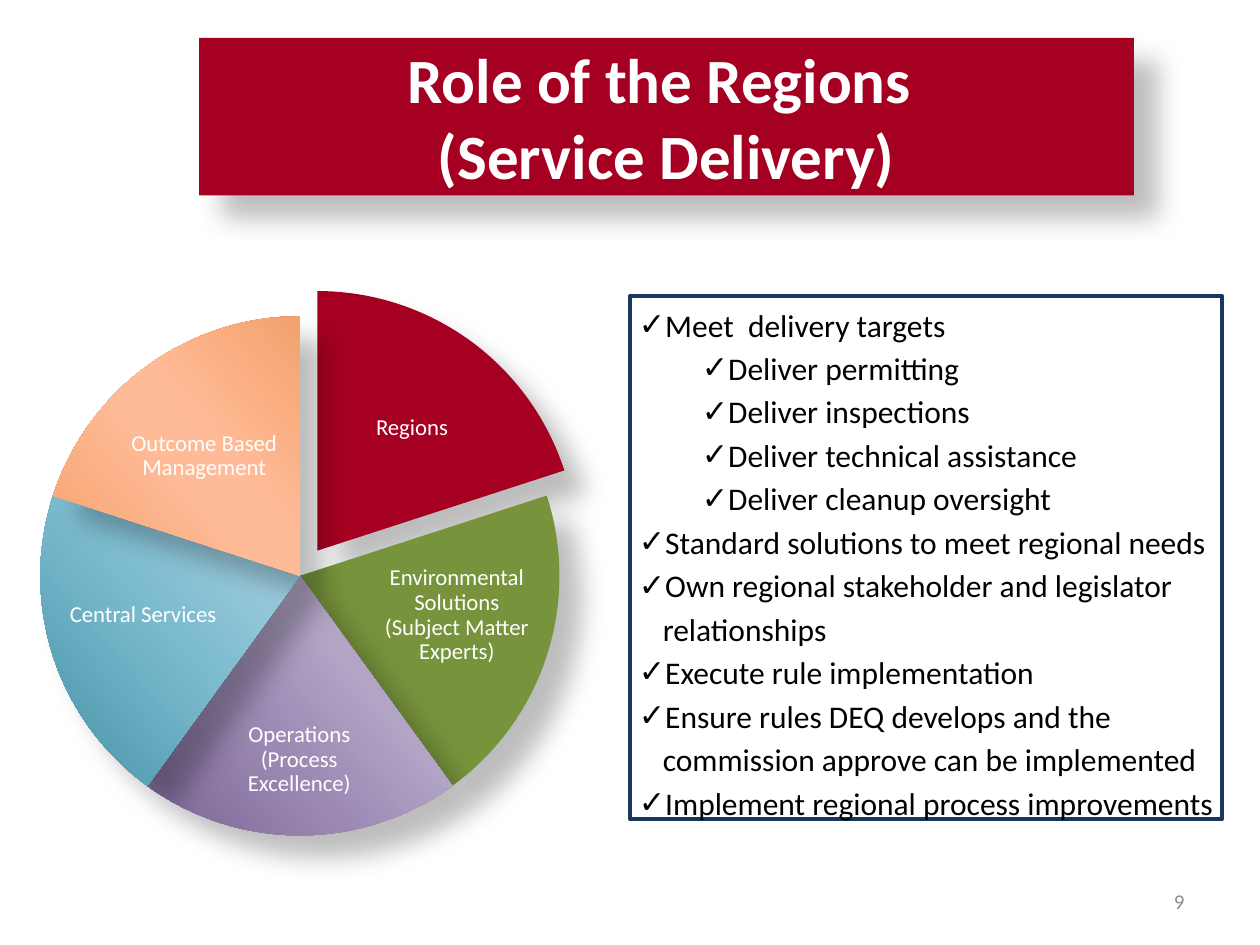
from lxml.etree import SubElement
from pptx import Presentation
from pptx.dml.color import RGBColor
from pptx.enum.shapes import MSO_SHAPE as SHAPE
from pptx.enum.text import MSO_ANCHOR as ANCHOR, MSO_AUTO_SIZE as AUTO, PP_ALIGN as ALIGN
from pptx.oxml.ns import qn
from pptx.util import Inches, Pt

COLORS = {"red": "A50021", "green": "77933C", "navy": "17375E", "gray": "8C8C8C",
          "white": "FFFFFF", "black": "000000"}
# Gradients from edge to middle and back to the edge
GRADIENTS = {
    "purple": ["675082", "9A88B2", "B1A4C5", "B1A4C5", "9B89B3", "675082"],
    "teal": ["3C8A9F", "7BBACF", "9ACADC", "9ACADC", "7CBBCF", "3C8A9F"],
    "orange": ["C67838", "F8A979", "FFBB97", "FFBB97", "F8AA7A", "C67838"],
}
STOPS = [0, 33, 47, 53, 68, 100]


def write(p, text, size=18, color="black", bold=False, align=None, spacing=None):
    p.text = text
    p.alignment = align
    p.line_spacing = spacing
    p.space_before = Pt(0)
    for r in p.runs:
        r.font.name = "Calibri"
        r.font.size = Pt(size)
        r.font.bold = bold
        r.font.color.rgb = RGBColor.from_string(COLORS[color])


def add_shadow(sp):
    sp.shadow.inherit = False
    effects = sp._element.spPr.find(qn("a:effectLst"))
    outer = SubElement(effects, qn("a:outerShdw"), blurRad=str(Pt(15)), dist=str(Pt(18)),
                       dir=str(45 * 60000), algn="tl", rotWithShape="0")
    clr = SubElement(outer, qn("a:srgbClr"), val=COLORS["black"])
    SubElement(clr, qn("a:alpha"), val="26000")


prs = Presentation()
prs.slide_width, prs.slide_height = Inches(10), Inches(7.5)
s = prs.slides.add_slide(prs.slide_layouts[1])

# Title band
title = s.shapes.title
title.left, title.top, title.width, title.height = [Inches(v) for v in (1.58, 0.3, 7.42, 1.25)]
title.fill.solid()
title.fill.fore_color.rgb = RGBColor.from_string(COLORS["red"])
add_shadow(title)
tf = title.text_frame
tf.auto_size = AUTO.NONE
tf.vertical_anchor = ANCHOR.MIDDLE
write(tf.paragraphs[0], "Role of the Regions \v(Service Delivery)", size=36, color="white",
      bold=True, align=ALIGN.CENTER)

# Slide number
number = s.shapes.add_textbox(Inches(7.17), Inches(6.95), Inches(2.33), Inches(0.4))
tf = number.text_frame
tf.word_wrap = True
tf.vertical_anchor = ANCHOR.MIDDLE
write(tf.paragraphs[0], "9", size=12, color="gray", align=ALIGN.RIGHT)

# Framed checklist
ITEMS = [
    (0, "Meet  delivery targets"),
    (1, "Deliver permitting"),
    (1, "Deliver inspections"),
    (1, "Deliver technical assistance"),
    (1, "Deliver cleanup oversight"),
    (0, "Standard solutions to meet regional needs"),
    (0, "Own regional stakeholder and legislator relationships"),
    (0, "Execute rule implementation"),
    (0, "Ensure rules DEQ develops and the commission approve can be implemented"),
    (0, "Implement regional process improvements"),
]
body = s.placeholders[1]
body.left, body.top, body.width, body.height = [Inches(v) for v in (5, 2.35, 4.7, 4.25)]
body.line.color.rgb = RGBColor.from_string(COLORS["navy"])
body.line.width = Pt(2)
tf = body.text_frame
tf.auto_size = AUTO.SHAPE_TO_FIT_TEXT
tf.margin_left = tf.margin_right = Inches(0.07)
tf.margin_top = tf.margin_bottom = Inches(0.03)
for i, (level, text) in enumerate(ITEMS):
    p = tf.paragraphs[0] if i == 0 else tf.add_paragraph()
    p.level = level
    pPr = p._p.get_or_add_pPr()
    pPr.set("marL", str(Inches(0.19 + 0.5 * level)))
    pPr.set("indent", str(Inches(-0.19)))
    SubElement(pPr, qn("a:buChar"), char="✓")
    write(p, text, align=ALIGN.LEFT, spacing=1.15)

# Pie of five equal slices, clockwise from the top; the first is pulled out
SLICES = [  # label, fill, label box
    ("Regions", "red", (2.57, 2.92, 1.4, 0.96)),
    ("Environmental Solutions (Subject Matter Experts)", "green", (3.01, 4.37, 1.23, 1.03)),
    ("Operations (Process Excellence)", "purple", (1.64, 5.59, 1.47, 0.88)),
    ("Central Services", "teal", (0.52, 4.37, 1.23, 1.03)),
    ("Outcome Based Management", "orange", (0.92, 3.14, 1.4, 0.96)),
]
FULL_TURN = 216
STEP = FULL_TURN / len(SLICES)
DIAMETER = Inches(4.12)
pie = s.shapes.add_group_shape()
for i, (label, color, box) in enumerate(SLICES):
    left, top = (0.46, 2.31) if i == 0 else (0.32, 2.51)
    sp = pie.shapes.add_shape(SHAPE.PIE, Inches(left), Inches(top), DIAMETER, DIAMETER)
    start = 162 + i * STEP
    sp.adjustments[0] = round(start % FULL_TURN, 1)
    sp.adjustments[1] = round((start + STEP) % FULL_TURN, 1)
    if color in GRADIENTS:
        sp.fill.gradient()
        sp.fill.gradient_angle = 221
        stops = sp._element.spPr.find(".//" + qn("a:gsLst"))
        for old in list(stops):
            stops.remove(old)
        for pos, value in zip(STOPS, GRADIENTS[color]):
            stop = SubElement(stops, qn("a:gs"), pos=str(pos * 1000))
            SubElement(stop, qn("a:srgbClr"), val=value)
    else:
        sp.fill.solid()
        sp.fill.fore_color.rgb = RGBColor.from_string(COLORS[color])
    sp.line.fill.background()
    add_shadow(sp)

    tf = pie.shapes.add_textbox(*[Inches(v) for v in box]).text_frame
    tf.word_wrap = True
    tf.vertical_anchor = ANCHOR.MIDDLE
    tf.margin_left = tf.margin_right = tf.margin_top = tf.margin_bottom = Inches(0.02)
    write(tf.paragraphs[0], label, size=13, color="white", align=ALIGN.CENTER, spacing=0.9)

prs.save("out.pptx")
